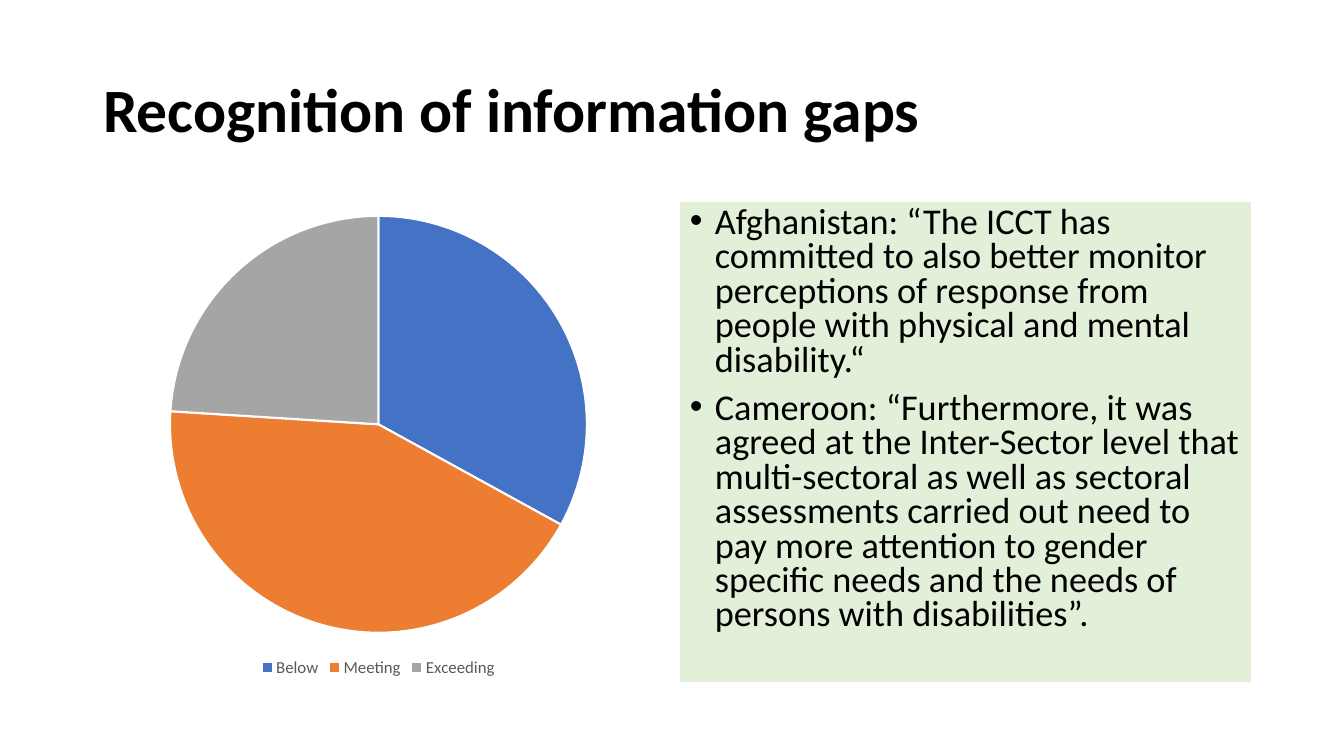
from lxml import etree
from pptx import Presentation
from pptx.chart.data import CategoryChartData
from pptx.dml.color import RGBColor
from pptx.enum.chart import XL_CHART_TYPE, XL_LEGEND_POSITION
from pptx.enum.shapes import MSO_SHAPE
from pptx.enum.text import MSO_ANCHOR, PP_ALIGN
from pptx.oxml.ns import qn
from pptx.util import Pt

PIE = XL_CHART_TYPE.PIE
BOTTOM = XL_LEGEND_POSITION.BOTTOM
RECTANGLE = MSO_SHAPE.RECTANGLE
TOP, MIDDLE = MSO_ANCHOR.TOP, MSO_ANCHOR.MIDDLE
LEFT = PP_ALIGN.LEFT

EMU_PER_PX = 914400 / 100.8
TITLE_ONLY = 5
COLOURS = {
    "text": "000000",
    "legend": "595959",
    "panel": "E2F0D9",
    "separator": "FFFFFF",
    "Below": "4472C4",
    "Meeting": "ED7D31",
    "Exceeding": "A5A5A5",
}
RATINGS = {"Below": 33, "Meeting": 43, "Exceeding": 24}
QUOTES = [
    "Afghanistan: “The ICCT has committed to also better monitor perceptions "
    "of response from people with physical and mental disability.“",
    "Cameroon: “Furthermore, it was agreed at the Inter-Sector level that "
    "multi-sectoral as well as sectoral assessments carried out need to pay "
    "more attention to gender specific needs and the needs of persons with "
    "disabilities”.",
]


def px(length):
    return round(length * EMU_PER_PX)


def colour(name):
    return RGBColor.from_string(COLOURS[name])


class SlideBuilder:
    font_name = "Calibri"

    def __init__(self, slide):
        self.slide = slide

    def style_font(self, font, size, colour_name="text", bold=False):
        font.name = self.font_name
        font.size = Pt(size)
        font.bold = bold
        font.color.rgb = colour(colour_name)

    def add_run(self, paragraph, text, size, bold=False):
        run = paragraph.add_run()
        run.text = text
        self.style_font(run.font, size, bold=bold)

    def title(self, text, left, top, width, height):
        shape = self.slide.shapes.title
        shape.left, shape.top = px(left), px(top)
        shape.width, shape.height = px(width), px(height)
        shape.text_frame.vertical_anchor = MIDDLE
        paragraph = shape.text_frame.paragraphs[0]
        paragraph.alignment = LEFT
        paragraph.line_spacing = 0.9
        self.add_run(paragraph, text, 44, bold=True)

    def pie(self, name, values, left, top, width, height):
        data = CategoryChartData()
        data.categories = list(values)
        data.add_series(name, list(values.values()))
        chart = self.slide.shapes.add_chart(
            PIE, px(left), px(top), px(width), px(height), data).chart
        self.style_font(chart.font, 10)
        chart.has_title = False
        chart.has_legend = True
        chart.legend.position = BOTTOM
        chart.legend.include_in_layout = False
        self.style_font(chart.legend.font, 12, "legend")
        plot = chart.plots[0]
        plot.vary_by_categories = True
        for index, category in enumerate(values):
            slice_format = plot.series[0].points[index].format
            slice_format.fill.solid()
            slice_format.fill.fore_color.rgb = colour(category)
            slice_format.line.color.rgb = colour("separator")
            slice_format.line.width = Pt(1.5)

    def bullet_panel(self, texts, left, top, width, height):
        shape = self.slide.shapes.add_shape(
            RECTANGLE, px(left), px(top), px(width), px(height))
        shape.shadow.inherit = False
        shape.fill.solid()
        shape.fill.fore_color.rgb = colour("panel")
        shape.line.fill.background()
        frame = shape.text_frame
        frame.word_wrap = True
        frame.vertical_anchor = TOP
        for index, text in enumerate(texts):
            paragraph = frame.add_paragraph() if index else frame.paragraphs[0]
            paragraph.alignment = LEFT
            paragraph.line_spacing = 0.79
            paragraph.space_before = Pt(10)
            self.add_bullet(paragraph, 25)
            self.add_run(paragraph, text, 25.9)

    def add_bullet(self, paragraph, indent):
        properties = paragraph._p.get_or_add_pPr()
        properties.set("marL", str(px(indent)))
        properties.set("indent", str(-px(indent)))
        etree.SubElement(properties, qn("a:buFont")).set("typeface", "Arial")
        etree.SubElement(properties, qn("a:buChar")).set("char", "•")


def main():
    presentation = Presentation()
    presentation.slide_width, presentation.slide_height = px(1344), px(756)
    layout = presentation.slide_layouts[TITLE_ONLY]
    builder = SlideBuilder(presentation.slides.add_slide(layout))

    # Title
    builder.title("Recognition of information gaps", 93, 40, 1159, 146)

    # Ratings chart beside the country quotes
    builder.pie("Series 1", RATINGS, 93, 202, 571, 480)
    builder.bullet_panel(QUOTES, 680, 202, 571, 480)

    presentation.save("out.pptx")


if __name__ == "__main__":
    main()
